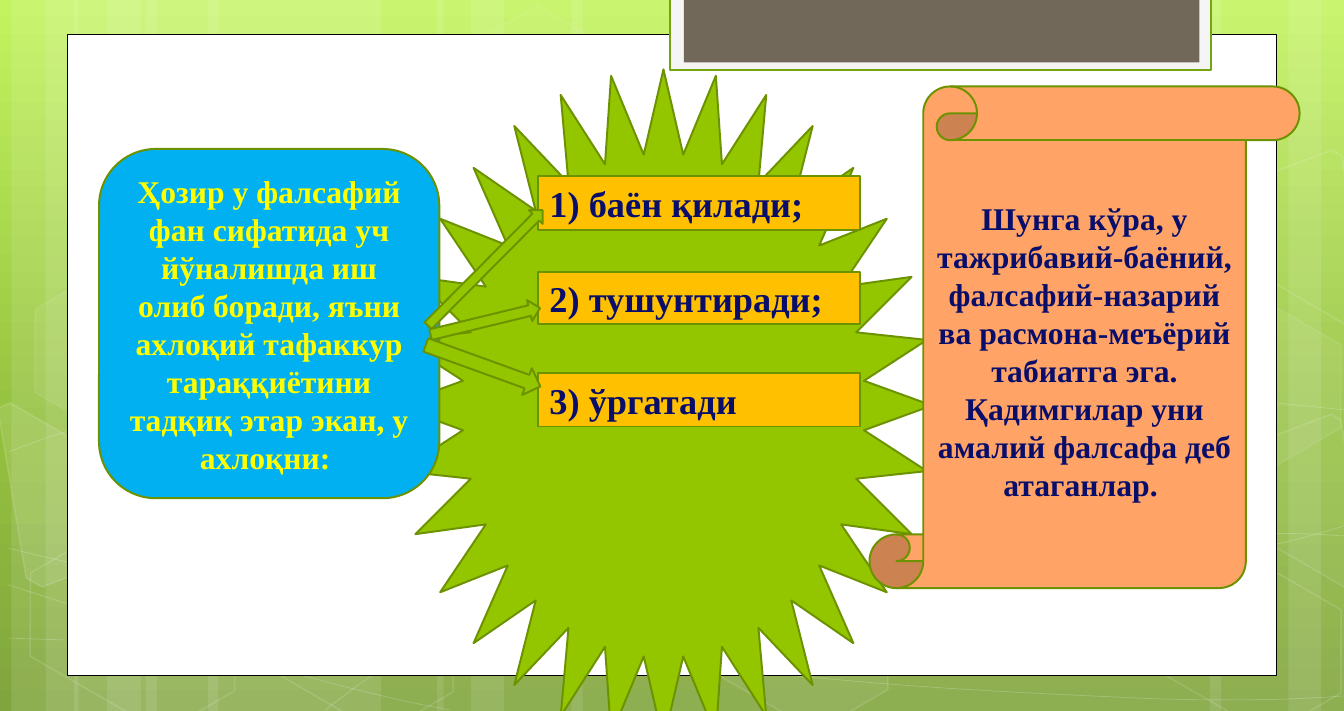
from copy import deepcopy

from lxml.etree import SubElement
from pptx import Presentation
from pptx.dml.color import RGBColor
from pptx.enum.shapes import MSO_SHAPE
from pptx.enum.text import MSO_ANCHOR, PP_ALIGN
from pptx.oxml.ns import qn
from pptx.util import Emu, Pt

PX = 9144
WIDTH, HEIGHT = 1181, 625
FONT = "Times New Roman"
COLORS = {
    "sky": "C3F35F", "meadow": "93BF3F", "moss": "81A53E",
    "white": "FFFFFF", "black": "000000", "mist": "F5F5F5",
    "tab": "71685A", "tab_edge": "74A510", "green": "94C600",
    "edge": "6D9200", "blue": "00B0F0", "yellow": "FFFF00",
    "amber": "FFC000", "navy": "090E6B", "peach": "FFA466",
}

BANDS = [(128, 207), (10, 59), (40, 98), (183, 207), (65, 59), (94, 98),
         (866, 207), (1132, 59), (1063, 98), (502, 364), (384, 59), (414, 98)]

CURVES = [
    [(8, 561), (72, 563), (136, 566), (225, 565), (314, 564), (422, 563), (541, 554),
     (659, 546), (827, 530), (935, 514), (1043, 498), (1154, 473), (1190, 459)],
    [(8, 397), (42, 384), (77, 372), (143, 359), (210, 347), (306, 329), (410, 323),
     (515, 316), (643, 316), (772, 323), (902, 329), (1119, 355), (1190, 361)],
    [(7, 514), (149, 560), (292, 606), (395, 624)],
    [(8, 482), (45, 491), (82, 500), (151, 513), (220, 526), (323, 546), (421, 561),
     (520, 575), (644, 590), (742, 598), (839, 607), (945, 611), (1007, 614),
     (1070, 616), (1086, 615), (1116, 615), (1147, 614), (1168, 613), (1190, 611)],
    [(286, 624), (307, 608), (328, 591), (357, 576), (385, 560), (425, 544), (458, 532),
     (491, 521), (511, 516), (555, 508), (598, 499), (677, 487), (719, 482),
     (760, 476), (767, 476), (803, 474), (840, 472), (897, 470), (938, 469),
     (979, 468), (1047, 469), (1047, 469), (1073, 469), (1099, 469), (1125, 469),
     (1147, 469), (1167, 470), (1177, 471), (1188, 471), (1184, 471), (1188, 472)],
]

HEXAGONS = [(395, 30, 4, 8), (587, 491, 6, 12), (13, 492, 0, 12), (17, 260, 7, 8),
            (205, 493, 0, 12), (985, 494, 0, 12), (985, 261, 7, 8)]

CUT_HEXAGONS = [
    ([(-2, 359), (9, 354), (100, 407), (113, 487), (37, 516), (23, 508)], 10),
    ([(1094, 393), (1170, 364), (1178, 369), (1204, 523), (1197, 525), (1107, 473)], 4),
    ([(1094, 161), (1170, 132), (1179, 137), (1204, 291), (1197, 294), (1107, 241)], 0),
]

DIRECTIONS = [
    ("1) баён қилади;", 155, 47, PP_ALIGN.LEFT),
    ("2) тушунтиради;", 239, 46, PP_ALIGN.LEFT),
    ("3) ўргатади", 328, 47, PP_ALIGN.JUSTIFY),
]
ARROWS = [(355, 227, 143, 17, 314.8), (377, 273, 99, 19, 346.3), (371, 309, 107, 25, 19.9)]

INTRO = ("Ҳозир у фалсафий фан сифатида уч йўналишда иш олиб боради, "
         "яъни ахлоқий тафаккур тараққиётини тадқиқ этар экан, у ахлоқни: ")
CONCLUSION = ("Шунга кўра, у тажрибавий-баёний, фалсафий-назарий ва "
              "расмона-меъёрий табиатга эга. Қадимгилар уни амалий "
              "фалсафа деб атаганлар. ")


def rgb(name):
    return RGBColor.from_string(COLORS[name])


def fade(shape, place, percent):
    for color in shape.element.xpath(f"./p:spPr/{place}a:solidFill/a:srgbClr"):
        SubElement(color, qn("a:alpha")).set("val", str(percent * 1000))


def paint(shape, fill=None, line=None, width=1.25, fill_alpha=100, line_alpha=100):
    shape.shadow.inherit = False
    if fill:
        shape.fill.solid()
        shape.fill.fore_color.rgb = rgb(fill)
        if fill_alpha < 100:
            fade(shape, "", fill_alpha)
    else:
        shape.fill.background()
    if line:
        shape.line.color.rgb = rgb(line)
        shape.line.width = Pt(width)
        if line_alpha < 100:
            fade(shape, "a:ln/", line_alpha)
    else:
        shape.line.fill.background()


def add_box(page, kind, frame, rotation=0, **style):
    box = page.shapes.add_shape(kind, *(Emu(length * PX) for length in frame))
    box.rotation = rotation
    paint(box, **style)
    return box


def add_outline(page, points, close, **style):
    start, *rest = points
    builder = page.shapes.build_freeform(*start, scale=PX)
    builder.add_line_segments(rest, close=close)
    outline = builder.convert_to_shape()
    paint(outline, **style)
    return outline


def bend(outline):
    segments = outline.element.xpath(".//a:lnTo")
    for first in range(0, len(segments), 3):
        curve = segments[first]
        for segment in segments[first + 1:first + 3]:
            curve.append(segment[0])
            segment.getparent().remove(segment)
        curve.tag = qn("a:cubicBezTo")


def write(box, text, size, color, align):
    box.text_frame.word_wrap = True
    box.text_frame.vertical_anchor = MSO_ANCHOR.MIDDLE
    para = box.text_frame.paragraphs[0]
    para.text = text
    para.alignment = align
    para.font.name = FONT
    para.font.size = Pt(size)
    para.font.bold = True
    para.font.color.rgb = rgb(color)


def set_background(page):
    fill = page.background.fill
    fill.gradient()
    fill.gradient_angle = 270
    stops = page.element.xpath(".//a:gsLst")[0]
    stops.append(deepcopy(stops[-1]))
    shades = [("sky", 0), ("meadow", 0.62), ("moss", 1)]
    for stop, (name, position) in zip(fill.gradient_stops, shades):
        stop.color.rgb = rgb(name)
        stop.position = position


def add_backdrop(page):
    for left, width in BANDS:
        add_box(page, MSO_SHAPE.RECTANGLE, (left, 0, width, HEIGHT),
                fill="white", fill_alpha=10)
    for nodes in CURVES:
        bend(add_outline(page, nodes, False, line="white", width=0.5, line_alpha=20))
    for left, top, fill_alpha, line_alpha in HEXAGONS:
        hexagon = add_box(page, MSO_SHAPE.HEXAGON, (left, top, 207, 127), 30,
                          fill="white" if fill_alpha else None, fill_alpha=fill_alpha,
                          line="white", width=1, line_alpha=line_alpha)
        hexagon.adjustments[0] = 0.285
    for points, fill_alpha in CUT_HEXAGONS:
        add_outline(page, points, True, fill="white" if fill_alpha else None,
                    fill_alpha=fill_alpha, line="white", width=1, line_alpha=12)


def add_panel(page):
    add_box(page, MSO_SHAPE.RECTANGLE, (59, 30, 1063, 564),
            fill="white", line="black", width=0.5)
    add_box(page, MSO_SHAPE.RECTANGLE, (589, -2, 475, 64), fill="mist", line="tab_edge")
    add_box(page, MSO_SHAPE.RECTANGLE, (601, -2, 453, 57), fill="tab")


def move_to_layout(page):
    tree = page.slide_layout.element.xpath("./p:cSld/p:spTree")[0]
    for placeholder in list(page.slide_layout.placeholders):
        tree.remove(placeholder.element)
    for shape in list(page.shapes):
        tree.append(shape.element)


def main():
    deck = Presentation()
    deck.slide_width, deck.slide_height = Emu(WIDTH * PX), Emu(HEIGHT * PX)
    page = deck.slides.add_slide(deck.slide_layouts[6])
    set_background(page)
    add_backdrop(page)
    add_panel(page)
    move_to_layout(page)

    add_box(page, MSO_SHAPE.STAR_32_POINT, (347, 61, 472, 591), fill="green", line="edge")
    intro = add_box(page, MSO_SHAPE.FLOWCHART_ALTERNATE_PROCESS, (87, 131, 299, 307),
                    fill="blue", line="edge")
    write(intro, INTRO, 20, "yellow", PP_ALIGN.CENTER)
    for text, top, height, align in DIRECTIONS:
        direction = add_box(page, MSO_SHAPE.RECTANGLE, (473, top, 283, height),
                            fill="amber", line="edge")
        write(direction, text, 23, "navy", align)
    for *frame, rotation in ARROWS:
        add_box(page, MSO_SHAPE.RIGHT_ARROW, frame, rotation, fill="green", line="edge")
    scroll = add_box(page, MSO_SHAPE.VERTICAL_SCROLL, (764, 76, 378, 441),
                     fill="peach", line="edge")
    write(scroll, CONCLUSION, 20, "navy", PP_ALIGN.CENTER)
    deck.save("out.pptx")


if __name__ == "__main__":
    main()
